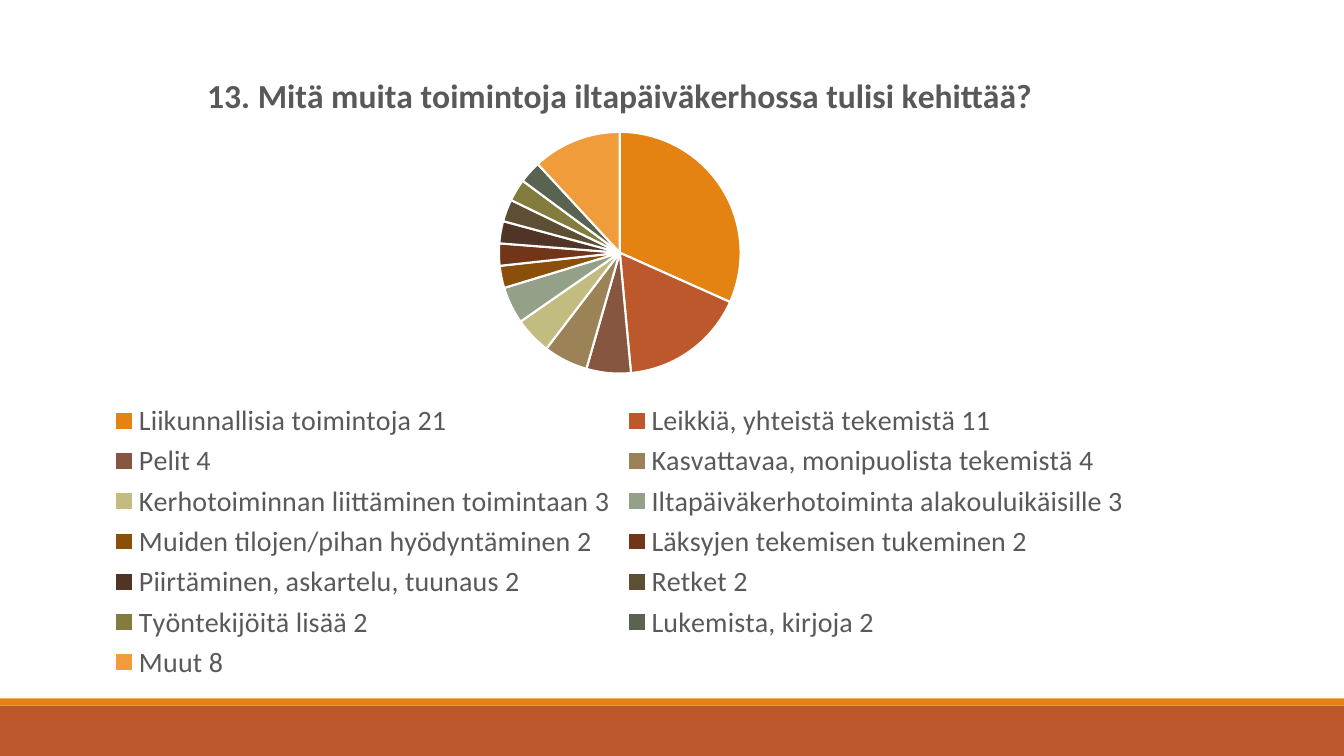
from lxml.etree import SubElement
from pptx import Presentation
from pptx.chart.data import CategoryChartData
from pptx.dml.color import RGBColor
from pptx.enum.chart import XL_CHART_TYPE, XL_LEGEND_POSITION
from pptx.enum.shapes import MSO_SHAPE
from pptx.oxml.ns import qn
from pptx.util import Cm, Pt

WHITE = RGBColor(0xFF, 0xFF, 0xFF)
GREY = RGBColor(0x59, 0x59, 0x59)
BLACK = RGBColor(0x00, 0x00, 0x00)
ORANGE = RGBColor(0xE4, 0x83, 0x12)
RUST = RGBColor(0xBD, 0x58, 0x2C)
BROWN = RGBColor(0x86, 0x56, 0x40)
TAN = RGBColor(0x9B, 0x83, 0x57)
SAND = RGBColor(0xC2, 0xBC, 0x80)
SAGE = RGBColor(0x94, 0xA0, 0x88)
DARK_ORANGE = RGBColor(0x89, 0x4F, 0x0B)
DARK_RUST = RGBColor(0x71, 0x35, 0x1A)
DARK_BROWN = RGBColor(0x50, 0x34, 0x26)
DARK_TAN = RGBColor(0x5D, 0x4F, 0x34)
OLIVE = RGBColor(0x83, 0x7C, 0x3F)
DARK_SAGE = RGBColor(0x59, 0x63, 0x4F)
LIGHT_ORANGE = RGBColor(0xF0, 0x9C, 0x3B)

FONT = "Calibri"
TITLE = "13. Mitä muita toimintoja iltapäiväkerhossa tulisi kehittää?"
ANSWERS = [
    ("Liikunnallisia toimintoja 21", 32, ORANGE),
    ("Leikkiä, yhteistä tekemistä 11", 17, RUST),
    ("Pelit 4", 6, BROWN),
    ("Kasvattavaa, monipuolista tekemistä 4", 6, TAN),
    ("Kerhotoiminnan liittäminen toimintaan 3", 5, SAND),
    ("Iltapäiväkerhotoiminta alakouluikäisille 3", 5, SAGE),
    ("Muiden tilojen/pihan hyödyntäminen 2", 3, DARK_ORANGE),
    ("Läksyjen tekemisen tukeminen 2", 3, DARK_RUST),
    ("Piirtäminen, askartelu, tuunaus 2", 3, DARK_BROWN),
    ("Retket 2", 3, DARK_TAN),
    ("Työntekijöitä lisää 2", 3, OLIVE),
    ("Lukemista, kirjoja 2", 3, DARK_SAGE),
    ("Muut 8", 12, LIGHT_ORANGE),
]


def format_font(font, size, color, bold=False):
    font.name = FONT
    font.size = Pt(size)
    font.bold = bold
    font.color.rgb = color


def write_text(text_frame, text, **font_format):
    paragraph = text_frame.paragraphs[0]
    run = paragraph.add_run()
    run.text = text
    format_font(run.font, **font_format)


def add_bar(slide, top, height, color):
    shape = slide.shapes.add_shape(MSO_SHAPE.RECTANGLE, 0, top, Cm(33.87), height)
    shape.shadow.inherit = False
    shape.fill.solid()
    shape.fill.fore_color.rgb = color
    shape.line.fill.background()


def place_plot(chart, **fractions):
    plot_area = chart.plots[0]._element.getparent()
    layout = plot_area.find(qn("c:layout"))
    if layout is None:
        layout = SubElement(plot_area, qn("c:layout"))
        plot_area.insert(0, layout)
    manual = SubElement(layout, qn("c:manualLayout"))
    settings = {"layoutTarget": "inner", "xMode": "edge", "yMode": "edge", **fractions}
    for name, value in settings.items():
        SubElement(manual, qn(f"c:{name}")).set("val", str(value))


def add_answer_pie(slide):
    names, values, colors = zip(*ANSWERS)
    chart_data = CategoryChartData()
    chart_data.categories = names
    chart_data.add_series("Series 1", values)
    chart = slide.shapes.add_chart(
        XL_CHART_TYPE.PIE, Cm(1.47), Cm(1.24), Cm(28.3), Cm(16.03), chart_data
    ).chart
    format_font(chart.font, size=10, color=BLACK)

    chart.has_title = True
    write_text(chart.chart_title.text_frame, TITLE, size=24, color=GREY, bold=True)
    chart.chart_title.include_in_layout = False

    chart.has_legend = True
    chart.legend.position = XL_LEGEND_POSITION.BOTTOM
    chart.legend.include_in_layout = False
    format_font(chart.legend.font, size=20, color=GREY)

    pie = chart.plots[0]
    pie.vary_by_categories = True
    for index, color in enumerate(colors):
        slice_format = pie.series[0].points[index].format
        slice_format.fill.solid()
        slice_format.fill.fore_color.rgb = color
        slice_format.line.color.rgb = WHITE
        slice_format.line.width = Pt(1.5)
    place_plot(chart, x=0.39, y=0.13, w=0.22, h=0.38)


def main():
    presentation = Presentation()
    presentation.slide_width = Cm(33.87)
    presentation.slide_height = Cm(19.05)
    slide = presentation.slides.add_slide(presentation.slide_layouts[6])
    add_bar(slide, Cm(17.78), Cm(1.27), RUST)
    add_bar(slide, Cm(17.6), Cm(0.18), ORANGE)
    add_answer_pie(slide)
    presentation.save("out.pptx")


if __name__ == "__main__":
    main()
